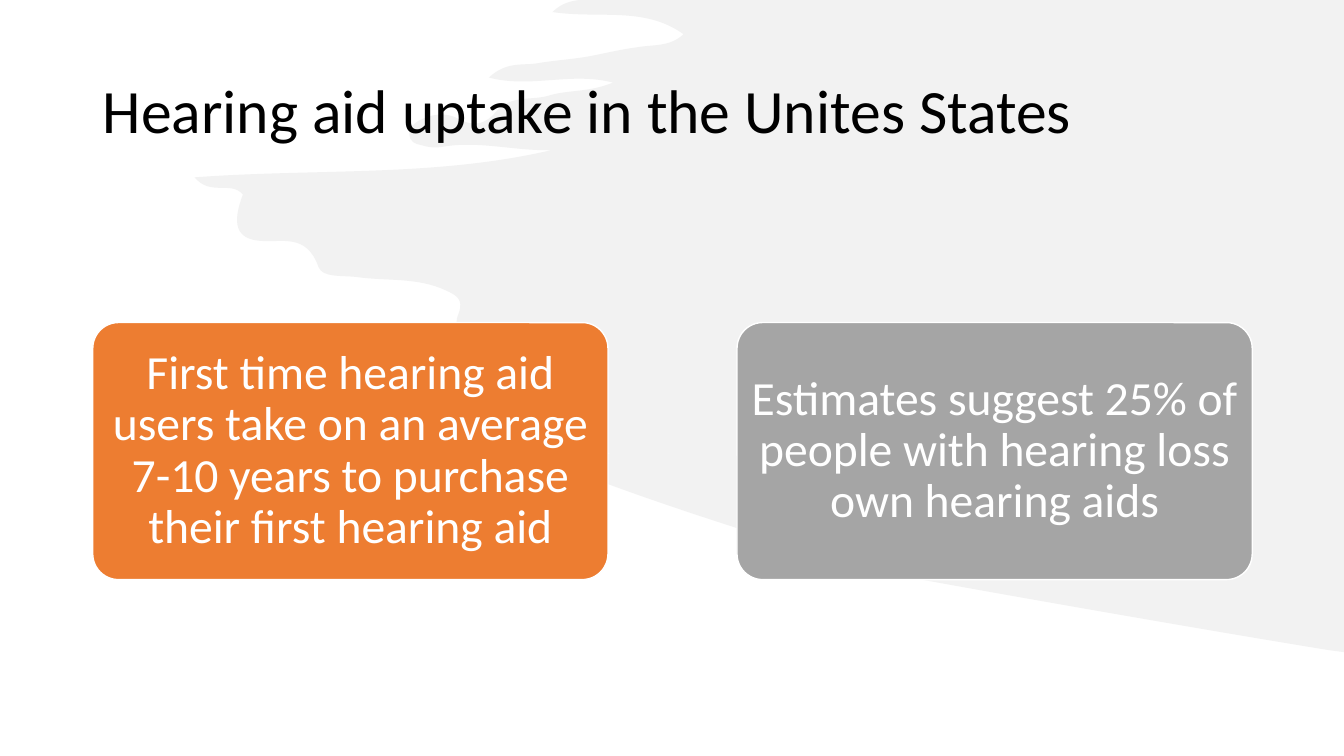
from lxml.etree import SubElement
from pptx import Presentation
from pptx.dml.color import RGBColor
from pptx.enum.shapes import MSO_SHAPE
from pptx.enum.text import MSO_ANCHOR, MSO_AUTO_SIZE, PP_ALIGN
from pptx.oxml.ns import qn
from pptx.util import Inches, Pt

BLACK = RGBColor(0x00, 0x00, 0x00)
WHITE = RGBColor(0xFF, 0xFF, 0xFF)
PALE_GRAY = RGBColor(0xF2, 0xF2, 0xF2)
ORANGE = RGBColor(0xED, 0x7D, 0x31)
GRAY = RGBColor(0xA5, 0xA5, 0xA5)

# Each row is one Bézier curve: two control points and the end point, in inches.
BRUSH_CURVES = [
    (5.67, 0.01, 5.57, 0.03, 5.48, 0.12),
    (5.95, 0.19, 6.39, 0.06, 6.78, 0.34),
    (6.64, 0.47, 6.48, 0.44, 6.32, 0.47),
    (6.16, 0.49, 6, 0.53, 5.84, 0.56),
    (5.67, 0.59, 5.49, 0.6, 5.32, 0.63),
    (5.18, 0.65, 5.02, 0.61, 4.85, 0.77),
    (5.27, 0.88, 5.66, 0.71, 6.08, 0.82),
    (5.84, 0.92, 5.63, 0.89, 5.44, 0.95),
    (5.27, 1, 5.06, 0.94, 4.92, 1.11),
    (4.81, 1.24, 4.69, 1.26, 4.55, 1.18),
    (4.42, 1.11, 4.28, 1.13, 4.15, 1.2),
    (4.11, 1.23, 4.06, 1.26, 4.06, 1.32),
    (4.06, 1.41, 4.12, 1.43, 4.18, 1.44),
    (4.24, 1.46, 4.31, 1.47, 4.37, 1.46),
    (4.74, 1.39, 5.1, 1.5, 5.47, 1.49),
    (4.31, 1.76, 3.14, 1.67, 1.93, 1.76),
    (2.09, 1.95, 2.29, 1.79, 2.41, 1.93),
    (2.3, 2.22, 2.34, 2.37, 2.58, 2.39),
    (2.8, 2.41, 3.04, 2.31, 3.16, 2.65),
    (3.2, 2.76, 3.41, 2.73, 3.55, 2.75),
    (3.84, 2.79, 4.14, 2.75, 4.42, 2.88),
    (4.53, 2.93, 4.6, 2.97, 4.55, 3.11),
    (4.49, 3.25, 4.56, 3.3, 4.66, 3.36),
    (4.73, 3.4, 4.83, 3.39, 4.89, 3.52),
    (4.28, 3.5, 3.69, 3.4, 3.09, 3.5),
    (3.75, 3.74, 4.47, 3.73, 5.12, 4.02),
    (5.1, 4.12, 4.95, 4.07, 4.94, 4.22),
    (5.28, 4.38, 5.69, 4.27, 6.05, 4.5),
    (5.84, 4.61, 5.65, 4.44, 5.45, 4.54),
    (5.52, 4.69, 8.4, 5.61, 8.92, 5.71),
    (9.78, 5.87, 11.95, 6.25, 13.18, 6.45),
]
CARDS = [
    ("First time hearing aid users take on an average 7-10 years to purchase "
     "their first hearing aid", ORANGE),
    ("Estimates suggest 25% of people with hearing loss own hearing aids", GRAY),
]


def write_text(frame, text, *, size, color, align):
    frame.word_wrap = True
    frame.auto_size = MSO_AUTO_SIZE.NONE
    frame.vertical_anchor = MSO_ANCHOR.MIDDLE
    para = frame.paragraphs[0]
    para.alignment = align
    para.line_spacing = 0.9
    para.space_before = Pt(0)
    span = para.add_run()
    span.text = text
    span.font.name = "Calibri"
    span.font.size = Pt(size)
    span.font.color.rgb = color


deck = Presentation()
deck.slide_width = Inches(13.33)
deck.slide_height = Inches(7.5)
page = deck.slides.add_slide(deck.slide_layouts[5])

# Brush stroke in the background: straight segments first, then bent into curves
corners = [(5.75, 0), *(curve[4:] for curve in BRUSH_CURVES), (13.33, 6.47)]
builder = page.shapes.build_freeform(Inches(13.33), 0)
builder.add_line_segments([(Inches(x), Inches(y)) for x, y in corners], close=True)
brush = builder.convert_to_shape()
brush.shadow.inherit = False
brush.fill.solid()
brush.fill.fore_color.rgb = PALE_GRAY
brush.line.fill.background()
segments = brush.element.xpath(".//a:lnTo")[1:-1]
for segment, (x1, y1, x2, y2, x3, y3) in zip(segments, BRUSH_CURVES):
    bend = segment.makeelement(qn("a:cubicBezTo"))
    for x, y in ((x1, y1), (x2, y2), (x3, y3)):
        SubElement(bend, qn("a:pt"), x=str(Inches(x) - brush.left),
                   y=str(Inches(y) - brush.top))
    segment.getparent().replace(segment, bend)

# Title, in front of the brush stroke
title = page.shapes.title
title.left, title.top = Inches(0.92), Inches(0.4)
title.width, title.height = Inches(11.5), Inches(1.45)
write_text(title.text_frame, "Hearing aid uptake in the Unites States",
           size=44, color=BLACK, align=PP_ALIGN.LEFT)
brush.element.addnext(title.element)

# Two fact cards
for index, (text, color) in enumerate(CARDS):
    card = page.shapes.add_shape(
        MSO_SHAPE.ROUNDED_RECTANGLE,
        Inches(0.92 + 6.39 * index), Inches(3.2), Inches(5.11), Inches(2.55))
    card.adjustments[0] = 0.1
    card.shadow.inherit = False
    card.fill.solid()
    card.fill.fore_color.rgb = color
    card.line.color.rgb = WHITE
    card.line.width = Pt(1)
    frame = card.text_frame
    frame.margin_left = frame.margin_right = Inches(0.07)
    frame.margin_top = frame.margin_bottom = Inches(0.05)
    write_text(frame, text, size=34, color=WHITE, align=PP_ALIGN.CENTER)

deck.save("out.pptx")
